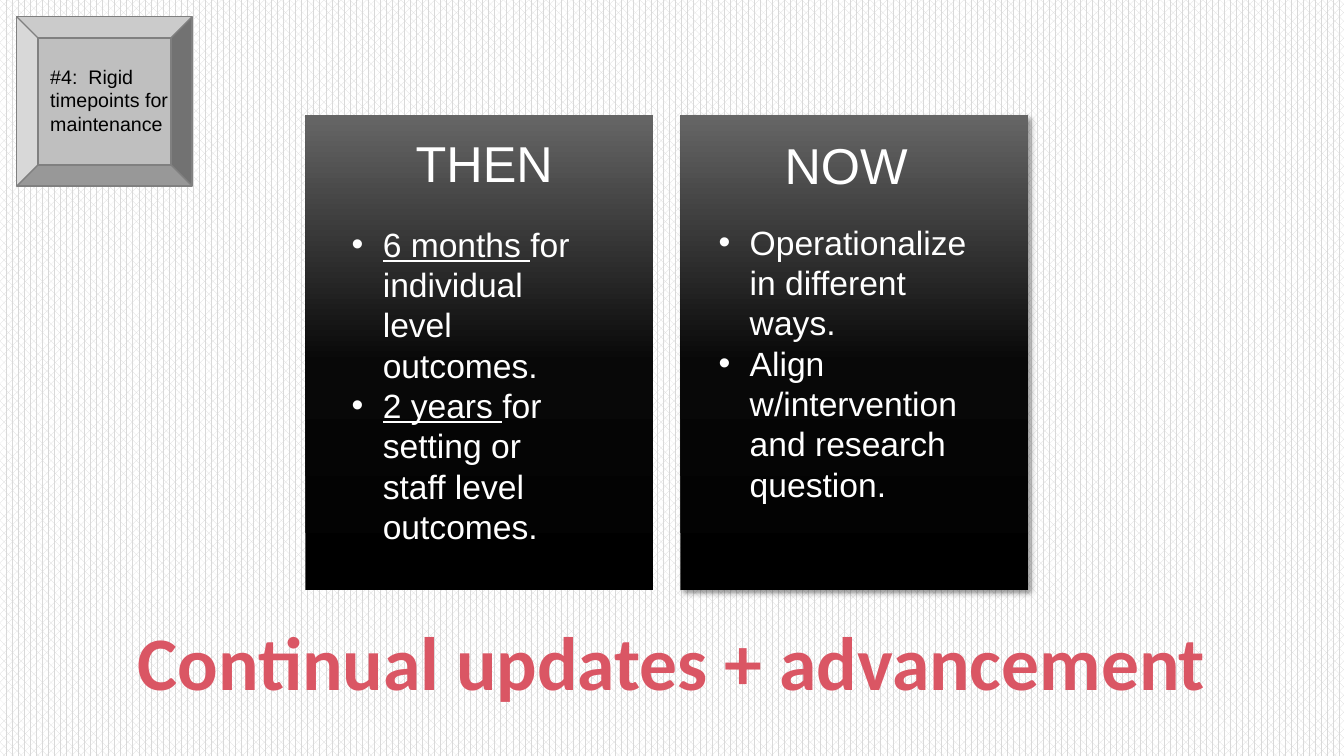
import copy
from dataclasses import dataclass

import pptx
import pptx.util
from lxml import etree
from pptx.dml.color import RGBColor
from pptx.enum.dml import MSO_PATTERN
from pptx.enum.shapes import MSO_SHAPE
from pptx.enum.text import MSO_ANCHOR, MSO_AUTO_SIZE, PP_ALIGN
from pptx.oxml.ns import qn

COLS, ROWS = 80, 45


@dataclass(frozen=True)
class Theme:
    black: str = "000000"
    white: str = "FFFFFF"
    stripe: str = "D9D9D9"
    bevel: str = "BFBFBF"
    edge: str = "808080"
    accent: str = "DA5664"
    card: tuple = ((0, "000000"), (0.48, "080808"), (1, "666666"))
    font: str = "Arial"
    banner_font: str = "Calibri"
    label: int = 14
    body: int = 24
    head: int = 36
    banner: int = 54


def rgb(value):
    return RGBColor.from_string(value)


class Deck:
    def __init__(self, theme):
        self.t = theme
        self.prs = pptx.Presentation()
        self.prs.slide_width = pptx.util.Inches(13.333)
        self.prs.slide_height = pptx.util.Inches(7.5)
        self.s = self.prs.slides.add_slide(self.prs.slide_layouts[5])
        fill = self.s.background.fill
        fill.patterned()
        fill.pattern = MSO_PATTERN.PERCENT_60
        fill.fore_color.rgb = rgb(theme.stripe)
        fill.back_color.rgb = rgb(theme.white)

    def box(self, col, row, width, height):
        """Turn grid columns and rows into slide lengths."""
        x, y = self.prs.slide_width / COLS, self.prs.slide_height / ROWS
        return [int(v) for v in (col * x, row * y, width * x, height * y)]

    def fill_text(self, tf, paragraphs, size, color, align=PP_ALIGN.LEFT,
                  bullet=False, wrap=True, **extra):
        """Fill a frame; each paragraph is a list of (text, font extras)."""
        tf.word_wrap = wrap
        tf.auto_size = MSO_AUTO_SIZE.NONE
        tf.vertical_anchor = MSO_ANCHOR.TOP
        for i, runs in enumerate(paragraphs):
            p = tf.add_paragraph() if i else tf.paragraphs[0]
            p.alignment = align
            if bullet:
                pPr = p._p.get_or_add_pPr()
                indent = pptx.util.Inches(0.31)
                pPr.set("marL", str(int(indent)))
                pPr.set("indent", str(-int(indent)))
                etree.SubElement(pPr, qn("a:buFont"), typeface="Arial")
                etree.SubElement(pPr, qn("a:buChar"), char="•")
            for text, own in runs:
                r = p.add_run()
                r.text = text
                style = {"name": self.t.font, "size": pptx.util.Pt(size), **extra, **own}
                for key, value in style.items():
                    setattr(r.font, key, value)
                r.font.color.rgb = rgb(color)

    def text(self, place, paragraphs, *args, **kw):
        tb = self.s.shapes.add_textbox(*self.box(*place))
        self.fill_text(tb.text_frame, paragraphs, *args, **kw)

    def title(self, place, text):
        sp = self.s.shapes.title
        sp.left, sp.top, sp.width, sp.height = self.box(*place)
        self.fill_text(sp.text_frame, [[(text, {})]], self.t.banner, self.t.accent,
                       PP_ALIGN.CENTER, wrap=False, name=self.t.banner_font, bold=True)

    def shape(self, kind, place):
        sp = self.s.shapes.add_shape(kind, *self.box(*place))
        sp.shadow.inherit = False
        return sp

    def bevel(self, place):
        sp = self.shape(MSO_SHAPE.BEVEL, place)
        sp.fill.solid()
        sp.fill.fore_color.rgb = rgb(self.t.bevel)
        sp.line.color.rgb = rgb(self.t.edge)
        sp.line.width = pptx.util.Pt(1)

    def card(self, place, shadow=False):
        sp = self.shape(MSO_SHAPE.RECTANGLE, place)
        sp.line.fill.background()
        sp.fill.gradient()
        sp.fill.gradient_angle = 90
        spPr = sp._element.spPr
        stops = spPr.find(qn("a:gradFill")).find(qn("a:gsLst"))
        stops.insert(1, copy.deepcopy(stops[0]))
        for stop, (position, color) in zip(sp.fill.gradient_stops, self.t.card):
            stop.position = position
            stop.color.rgb = rgb(color)
        if shadow:
            outer = etree.SubElement(
                spPr.find(qn("a:effectLst")), qn("a:outerShdw"),
                blurRad=str(int(pptx.util.Pt(4))), dist=str(int(pptx.util.Pt(3))),
                dir="2700000", algn="tl", rotWithShape="0")
            clr = etree.SubElement(outer, qn("a:srgbClr"), val=self.t.black)
            etree.SubElement(clr, qn("a:alpha"), val="40000")


def main():
    t = Theme()
    d = Deck(t)
    d.bevel((1, 1, 10.44, 10.08))
    d.text((2.4, 3.54, 8.7, 4.86), [[("#4:  Rigid timepoints for maintenance", {})]],
           t.label, t.black)

    underlined = {"underline": True}
    then = [[("6 months ", underlined), ("for individual level outcomes.", {})],
            [("2 years ", underlined), ("for setting or staff level outcomes.", {})]]
    now = [[("Operationalize in different ways.", {})],
           [("Align w/intervention and research question.", {})]]
    cards = [
        ("THEN", then, (20.34, 7.56), (20.34, 13.02, 15.42, 20), False),
        ("NOW", now, (41.88, 7.68), (42.18, 12.9, 16.98, 20), True),
    ]
    for i, (head, body, head_at, body_place, shadow) in enumerate(cards):
        d.card((18.18 + i * 22.32, 6.84, 20.7, 28.26), shadow)
        d.text((*head_at, 16.98, 4.26), [[(head, {})]], t.head, t.white, PP_ALIGN.CENTER)
        d.text(body_place, body, t.body, t.white, bullet=True)

    d.title((7.26, 36.3, 65.46, 6.06), "Continual updates + advancement")
    d.prs.save("out.pptx")


if __name__ == "__main__":
    main()
